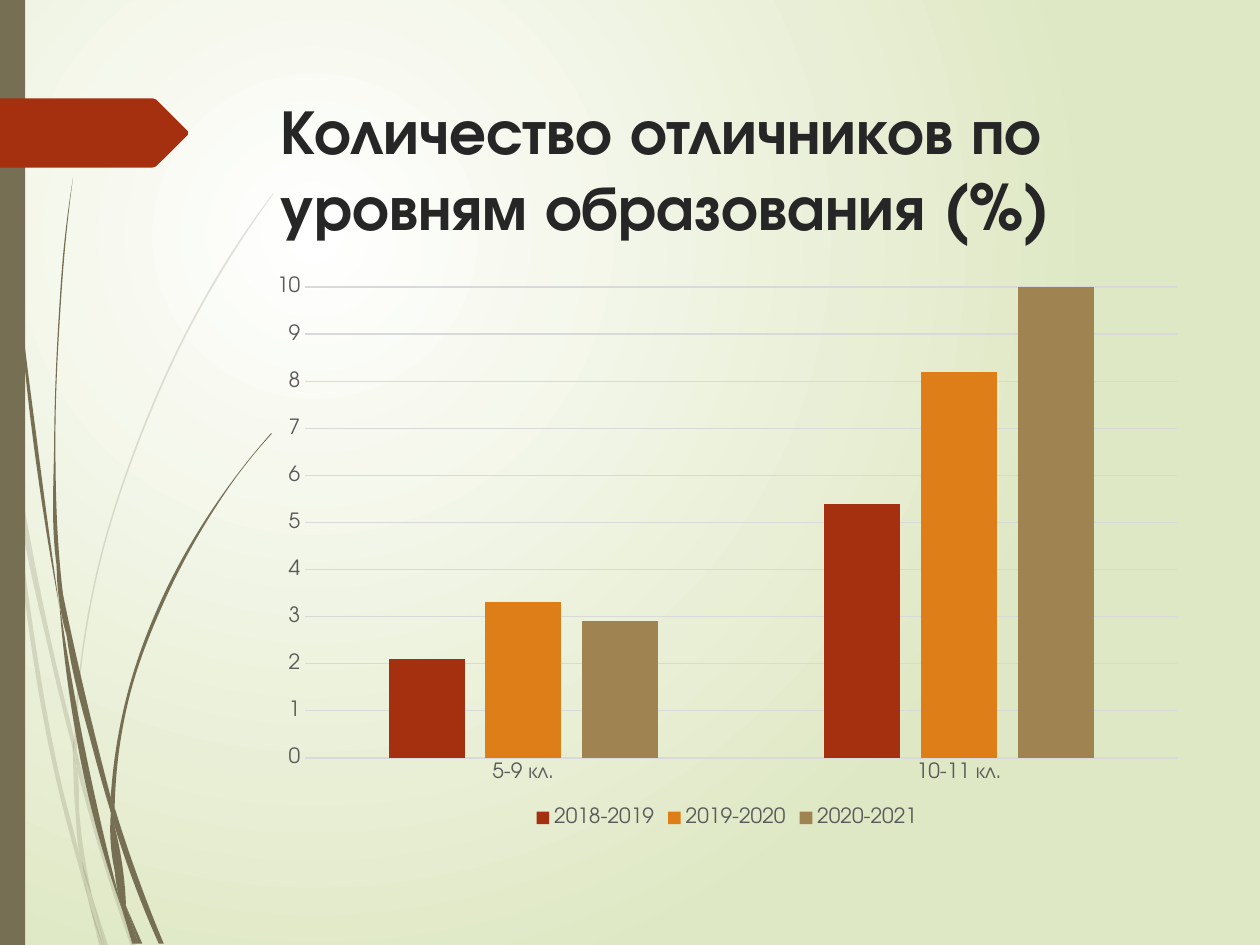
from dataclasses import dataclass

from lxml import etree
from pptx import Presentation
from pptx.chart.data import CategoryChartData
from pptx.dml.color import RGBColor
from pptx.enum.chart import XL_CHART_TYPE, XL_LEGEND_POSITION, XL_TICK_MARK
from pptx.enum.shapes import MSO_SHAPE
from pptx.enum.text import MSO_ANCHOR, PP_ALIGN
from pptx.oxml.ns import qn
from pptx.util import Inches, Pt

COLUMNS = XL_CHART_TYPE.COLUMN_CLUSTERED
LEGEND_BOTTOM = XL_LEGEND_POSITION.BOTTOM
NO_TICK = XL_TICK_MARK.NONE
RECTANGLE = MSO_SHAPE.RECTANGLE
TOP = MSO_ANCHOR.TOP
LEFT = PP_ALIGN.LEFT


@dataclass(frozen=True)
class Theme:
    font: str = "TeX Gyre Adventor"
    title_size: int = 36
    label_size: int = 12
    title: str = "262626"
    label: str = "595959"
    grid: str = "D9D9D9"
    grass: str = "766F54"
    arrow: str = "A53010"
    glow: str = "FFFFFF"
    backdrop: str = "DFE8C4"
    series: tuple = ("A53010", "DE7E18", "9F8351")


THEME = Theme()
WIDTH, HEIGHT = 10, 7.5

TITLE = "Количество отличников по уровням образования (%)"
CATEGORIES = ["5-9 кл.", "10-11 кл."]
SERIES = {
    "2018-2019": (2.1, 5.4),
    "2019-2020": (3.3, 8.2),
    "2020-2021": (2.9, 22),
}

ARROW = [(0, 0.78), (1.21, 0.78), (1.24, 0.79), (1.49, 1.04),
         (1.49, 1.07), (1.24, 1.32), (1.21, 1.33), (0, 1.33)]

# Every blade part is a pair of edges, each running from top to bottom.
PALE_GRASS = [
    ([(0, 2.82), (0.06, 3.22), (0.08, 3.5)], [(0, 2.99), (0.07, 3.44), (0.08, 3.5)]),
    ([(0.1, 3.45), (0.43, 5.2), (0.59, 5.86)],
     [(0.1, 3.45), (0.12, 3.76), (0.4, 5.22), (0.59, 5.99)]),
    ([(0.61, 5.96), (0.88, 6.92), (1.08, 7.51)],
     [(0.61, 6.1), (0.85, 6.94), (1.04, 7.51)]),
    ([(0.73, 7.11), (0.86, 7.51)], [(0.73, 7.11), (0.83, 7.51)]),
    ([(0.08, 3.5), (0.22, 4.69), (0.48, 6.19), (0.64, 6.83), (0.7, 7.14)],
     [(0.08, 3.5), (0.19, 4.7), (0.45, 6.21), (0.64, 6.93), (0.7, 7.14)]),
    ([(0.58, 5.99), (0.6, 6.46), (0.64, 6.83), (0.73, 7.11)],
     [(0.58, 5.99), (0.61, 6.1), (0.63, 6.46), (0.73, 7.11)]),
    ([(2.17, 1.53), (1.86, 1.97), (1.58, 2.44), (1.1, 3.48), (0.75, 4.61), (0.59, 5.84)],
     [(2.17, 1.54), (1.87, 1.98), (1.59, 2.45), (1.11, 3.49), (0.76, 4.62), (0.61, 5.84),
      (0.61, 5.96)]),
    ([(0.7, 7.14), (0.82, 7.51)], [(0.7, 7.14), (0.79, 7.51)]),
    ([(0.59, 5.86), (0.58, 5.99), (0.61, 6.08)], [(0.59, 5.86), (0.61, 5.96), (0.61, 6.1)]),
    ([(0.65, 6.83), (0.73, 7.11), (0.83, 7.51)], [(0.65, 6.83), (0.7, 7.14), (0.82, 7.51)]),
]
DARK_GRASS = [
    ([(0.02, 0), (0.05, 1.1), (0.14, 2.33), (0.27, 3.55), (0.47, 4.81)],
     [(0.03, 0), (0.06, 1.09), (0.15, 2.32), (0.3, 3.55), (0.47, 4.81)]),
    ([(0.5, 4.72), (0.53, 5.05), (0.73, 5.92), (0.88, 6.45)],
     [(0.5, 4.72), (0.77, 5.9), (0.88, 6.33)]),
    ([(0.91, 6.41), (1.13, 7.06), (1.3, 7.49)], [(0.91, 6.56), (1.09, 7.08), (1.26, 7.49)]),
    ([(0.47, 4.77), (0.56, 5.57), (0.77, 6.59), (0.97, 7.22)],
     [(0.47, 4.77), (0.6, 5.56), (0.81, 6.57), (0.97, 7.22)]),
    ([(0.58, 1.41), (0.51, 1.93), (0.47, 2.45), (0.43, 3.49), (0.45, 4.49), (0.49, 4.72)],
     [(0.58, 1.41), (0.52, 1.93), (0.48, 2.45), (0.44, 3.49), (0.48, 4.53), (0.5, 4.72)]),
    ([(1, 7.19), (1.13, 7.49)], [(1, 7.19), (1.1, 7.49)]),
    ([(0.45, 4.49), (0.47, 4.77), (0.53, 5.05)], [(0.45, 4.49), (0.5, 4.72), (0.53, 5.05)]),
    ([(2.15, 3.44), (1.91, 3.73), (1.68, 4.05), (1.29, 4.74), (1.01, 5.51), (0.88, 6.31)],
     [(2.16, 3.44), (1.91, 3.74), (1.69, 4.06), (1.31, 4.76), (1.03, 5.52), (0.91, 6.41)]),
    ([(0.97, 7.22), (1.08, 7.49)], [(0.97, 7.22), (1.05, 7.49)]),
    ([(0.88, 6.45), (0.91, 6.91), (1, 7.19)], [(0.88, 6.45), (0.91, 6.56), (1, 7.19)]),
    ([(0.88, 6.31), (0.88, 6.45), (0.91, 6.56)], [(0.88, 6.31), (0.91, 6.41), (0.91, 6.56)]),
    ([(0.91, 6.91), (1, 7.19), (1.1, 7.49)], [(0.91, 6.91), (0.97, 7.22), (1.08, 7.49)]),
]


def paint(shape, color, opacity=100):
    shape.shadow.inherit = False
    shape.line.fill.background()
    shape.fill.solid()
    shape.fill.fore_color.rgb = RGBColor.from_string(color)
    if opacity < 100:
        tint = shape.element.spPr.find(".//" + qn("a:srgbClr"))
        etree.SubElement(tint, qn("a:alpha"), val=str(opacity * 1000))


def add_outline(shapes, points, color, opacity=100):
    corners = [(Inches(x), Inches(y)) for x, y in points]
    builder = shapes.build_freeform(*corners[0])
    builder.add_line_segments(corners[1:])
    shape = builder.convert_to_shape()
    paint(shape, color, opacity)
    return shape


def bend(nodes):
    """Turn the straight segments between the nodes into one smooth curve."""
    points = [complex(int(node.get("x")), int(node.get("y"))) for node in nodes]
    chords = [end - start for start, end in zip(points, points[1:])]
    lengths = [abs(chord) for chord in chords]
    slopes = [chord / length for chord, length in zip(chords, lengths)]
    inner = [(slopes[i] * lengths[i + 1] + slopes[i + 1] * lengths[i]) / (lengths[i] + lengths[i + 1])
             for i in range(len(slopes) - 1)]
    tangents = [2 * slopes[0] - inner[0], *inner, 2 * slopes[-1] - inner[-1]]
    for i, node in enumerate(nodes[1:]):
        segment = node.getparent()
        curve = etree.Element(qn("a:cubicBezTo"))
        for control in (points[i] + tangents[i] * lengths[i] / 3,
                        points[i + 1] - tangents[i + 1] * lengths[i] / 3):
            etree.SubElement(curve, qn("a:pt"), x=str(round(control.real)), y=str(round(control.imag)))
        segment.getparent().replace(segment, curve)
        curve.append(node)


def add_grass(page, blades, opacity):
    group = page.shapes.add_group_shape()
    for near_edge, far_edge in blades:
        blade = add_outline(group.shapes, near_edge + far_edge[::-1], THEME.grass, opacity)
        nodes = list(blade.element.iter(qn("a:pt")))
        for edge in (nodes[:len(near_edge)], nodes[len(near_edge):]):
            if len(edge) > 2:
                bend(edge)


def style_font(font, size, color):
    font.name = THEME.font
    font.size = Pt(size)
    font.color.rgb = RGBColor.from_string(color)


def set_background(page):
    fill = page.background.fill
    fill.gradient()
    for stop, position, color in zip(fill.gradient_stops, (0, 1), (THEME.glow, THEME.backdrop)):
        stop.position = position
        stop.color.rgb = RGBColor.from_string(color)
    gradient = page.element.find(".//" + qn("a:gradFill"))
    gradient.remove(gradient.find(qn("a:lin")))
    circle = etree.SubElement(gradient, qn("a:path"), {"path": "circle"})
    etree.SubElement(circle, qn("a:fillToRect"), l="50000", t="50000", r="100000", b="100000")


def set_title(page):
    title = page.shapes.title
    title.element.getparent().append(title.element)  # in front of the decoration
    title.left, title.top, title.width, title.height = map(Inches, (2.13, 0.68, 7.21, 1.4))
    frame = title.text_frame
    frame.text = TITLE
    frame.word_wrap = True
    frame.vertical_anchor = TOP
    paragraph = frame.paragraphs[0]
    paragraph.alignment = LEFT
    span = paragraph.runs[0]
    style_font(span.font, THEME.title_size, THEME.title)
    span.font.bold = True


def add_results_chart(page):
    data = CategoryChartData()
    data.categories = CATEGORIES
    for name, values in SERIES.items():
        data.add_series(name, values)
    chart = page.shapes.add_chart(COLUMNS, *map(Inches, (2.05, 2.11, 7.44, 4.5)), data).chart
    chart.has_title, chart.has_legend = False, True
    chart.legend.position = LEGEND_BOTTOM
    chart.legend.include_in_layout = False
    plot = chart.plots[0]
    plot.gap_width, plot.overlap, plot.vary_by_categories = 219, -27, False
    for series, color in zip(plot.series, THEME.series):
        series.format.fill.solid()
        series.format.fill.fore_color.rgb = RGBColor.from_string(color)
    categories, values = chart.category_axis, chart.value_axis
    for font in (chart.font, chart.legend.font, categories.tick_labels.font, values.tick_labels.font):
        style_font(font, THEME.label_size, THEME.label)
    categories.major_tick_mark = values.major_tick_mark = NO_TICK
    values.maximum_scale, values.major_unit = 10, 1
    values.format.line.fill.background()
    for line in (categories.format.line, values.major_gridlines.format.line):
        line.color.rgb = RGBColor.from_string(THEME.grid)
        line.width = Pt(0.75)


deck = Presentation()
deck.slide_width, deck.slide_height = Inches(WIDTH), Inches(HEIGHT)
page = deck.slides.add_slide(deck.slide_layouts.get_by_name("Title Only"))
set_background(page)
add_grass(page, PALE_GRASS, 20)
add_grass(page, DARK_GRASS, 100)
paint(page.shapes.add_shape(RECTANGLE, 0, 0, Inches(0.02 * WIDTH), Inches(HEIGHT)), THEME.grass)
add_outline(page.shapes, ARROW, THEME.arrow)
set_title(page)
add_results_chart(page)
deck.save("out.pptx")
